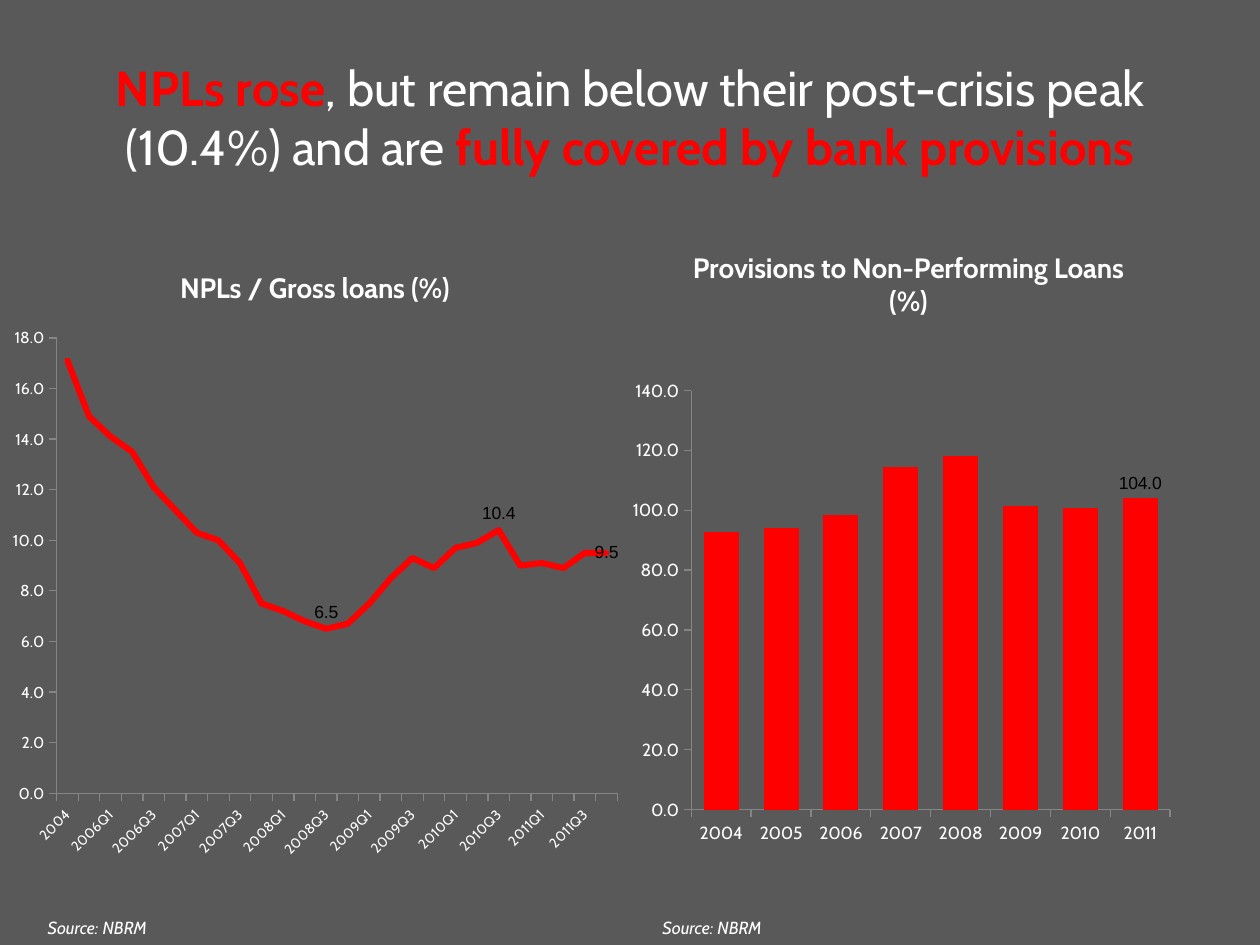
from lxml.etree import SubElement
from pptx import Presentation
from pptx.chart.data import CategoryChartData
from pptx.dml.color import RGBColor
from pptx.enum.chart import XL_CHART_TYPE as Kind, XL_LABEL_POSITION as Spot, XL_TICK_MARK as Tick
from pptx.enum.text import MSO_ANCHOR, PP_ALIGN
from pptx.oxml.ns import qn
from pptx.util import Inches, Pt


class Theme:
    font, label_font = "Cabin", "Arial"
    back = RGBColor(0x59, 0x59, 0x59)
    text = RGBColor(0xFF, 0xFF, 0xFF)
    accent = RGBColor(0xFF, 0, 0)
    label = RGBColor(0, 0, 0)
    axis = RGBColor(0x86, 0x86, 0x86)
    head, title, small = 28, 16, 10


# Content
HEAD = [("NPLs rose", True),
        (", but remain below their post-crisis peak (10.4%) and are ", False),
        ("fully covered by bank provisions", True)]
SOURCE = "Source: NBRM"
SOURCE_LEFTS = (0.28, 5.16)
QUARTERS = ["2004", "2005"] + [f"{y}Q{q}" for y in range(2006, 2012) for q in range(1, 5)]
YEARS = [str(y) for y in range(2004, 2012)]
CHARTS = [
    dict(kind=Kind.LINE_MARKERS, title="NPLs / Gross loans (%)", box=(0, 1.94, 5, 4.95),
         plot=(0.09, 0.15, 0.89, 0.73), cats=QUARTERS, sizes=(8, 9), top=18, step=2,
         vals=[17.1, 14.9, 14.1, 13.5, 12.1, 11.2, 10.3, 10, 9.1, 7.5, 7.2, 6.8, 6.5,
               6.7, 7.5, 8.5, 9.3, 8.9, 9.7, 9.9, 10.4, 9, 9.1, 8.9, 9.5, 9.5],
         marks={12: Spot.ABOVE, 20: Spot.ABOVE, 25: Spot.CENTER}),
    dict(kind=Kind.COLUMN_CLUSTERED, title="Provisions to Non-Performing Loans (%)",
         box=(5, 1.78, 4.42, 5.28), plot=(0.11, 0.25, 0.86, 0.63), cats=YEARS,
         sizes=(10, 10), top=140, step=20,
         vals=[92.6, 94.2, 98.3, 114.3, 118.1, 101.4, 100.7, 104],
         marks={7: Spot.OUTSIDE_END}),
]


def style(font, size, color=Theme.text, bold=False, name=Theme.font):
    font.name, font.size, font.bold = name, Pt(size), bold
    font.color.rgb = color


def add_text(slide, box, parts, size, italic=False):
    frame = slide.shapes.add_textbox(*map(Inches, box)).text_frame
    frame.word_wrap = True
    for text, strong in parts:
        run = frame.paragraphs[0].add_run()
        run.text = text
        style(run.font, size, Theme.accent if strong else Theme.text, strong)
        run.font.italic = italic
    return frame


def set_plot(chart, plot):
    area = chart._chartSpace.chart.plotArea
    for old in area.findall(qn("c:layout")):
        area.remove(old)
    layout = SubElement(area, qn("c:layout"))
    area.insert(0, layout)
    manual = SubElement(layout, qn("c:manualLayout"))
    pairs = [("layoutTarget", "inner"), ("xMode", "edge"), ("yMode", "edge"),
             *zip("xywh", plot)]
    for tag, val in pairs:
        SubElement(manual, qn("c:" + tag)).set("val", str(val))


def add_chart(slide, item):
    data = CategoryChartData(number_format="0.0")
    data.categories = item["cats"]
    data.add_series(item["title"], item["vals"])
    chart = slide.shapes.add_chart(item["kind"], *map(Inches, item["box"]), data).chart
    chart.has_legend = False
    style(chart.font, item["sizes"][1])
    chart.has_title = True
    chart.chart_title.include_in_layout = False
    chart.chart_title.text_frame.text = item["title"]
    style(chart.chart_title.text_frame.paragraphs[0].runs[0].font, Theme.title, bold=True)
    set_plot(chart, item["plot"])

    # Axes
    for axis, size in zip((chart.category_axis, chart.value_axis), item["sizes"]):
        axis.has_major_gridlines = False
        axis.major_tick_mark = Tick.OUTSIDE
        axis.format.line.color.rgb = Theme.axis
        style(axis.tick_labels.font, size)
    value = chart.value_axis
    value.minimum_scale, value.maximum_scale = 0, item["top"]
    value.major_unit = item["step"]
    value.tick_labels.number_format = "0.0"
    value.tick_labels.number_format_is_linked = False

    # Series
    plot = chart.plots[0]
    plot.vary_by_categories = False
    series = plot.series[0]
    if item["kind"] == Kind.COLUMN_CLUSTERED:
        plot.gap_width = 71
        series.format.fill.solid()
        series.format.fill.fore_color.rgb = Theme.accent
    else:
        series.smooth = False
        series.marker.style = None
        series.marker.format.fill.background()
        series.marker.format.line.fill.background()
        series.marker.size = 2
        series.format.line.color.rgb = Theme.accent
        series.format.line.width = Pt(3.5)
        body = chart.category_axis._element.find(".//" + qn("a:bodyPr"))
        body.set("rot", "-2700000")
    for index, spot in item["marks"].items():
        label = series.points[index].data_label
        style(label.font, Theme.small, Theme.label, name=Theme.label_font)
        label.position = spot


def main():
    deck = Presentation()
    deck.slide_width, deck.slide_height = Inches(10), Inches(7.5)
    slide = deck.slides.add_slide(deck.slide_layouts[6])
    slide.background.fill.solid()
    slide.background.fill.fore_color.rgb = Theme.back

    # Heading
    frame = add_text(slide, (0.2, 0.3, 9.6, 1.25), HEAD, Theme.head)
    frame.vertical_anchor = MSO_ANCHOR.MIDDLE
    frame.paragraphs[0].alignment = PP_ALIGN.CENTER

    # Charts and their sources
    for item, left in zip(CHARTS, SOURCE_LEFTS):
        add_chart(slide, item)
        add_text(slide, (left, 7.23, 1.57, 0.27), [(SOURCE, False)], Theme.small, True)

    deck.save("out.pptx")


if __name__ == "__main__":
    main()
